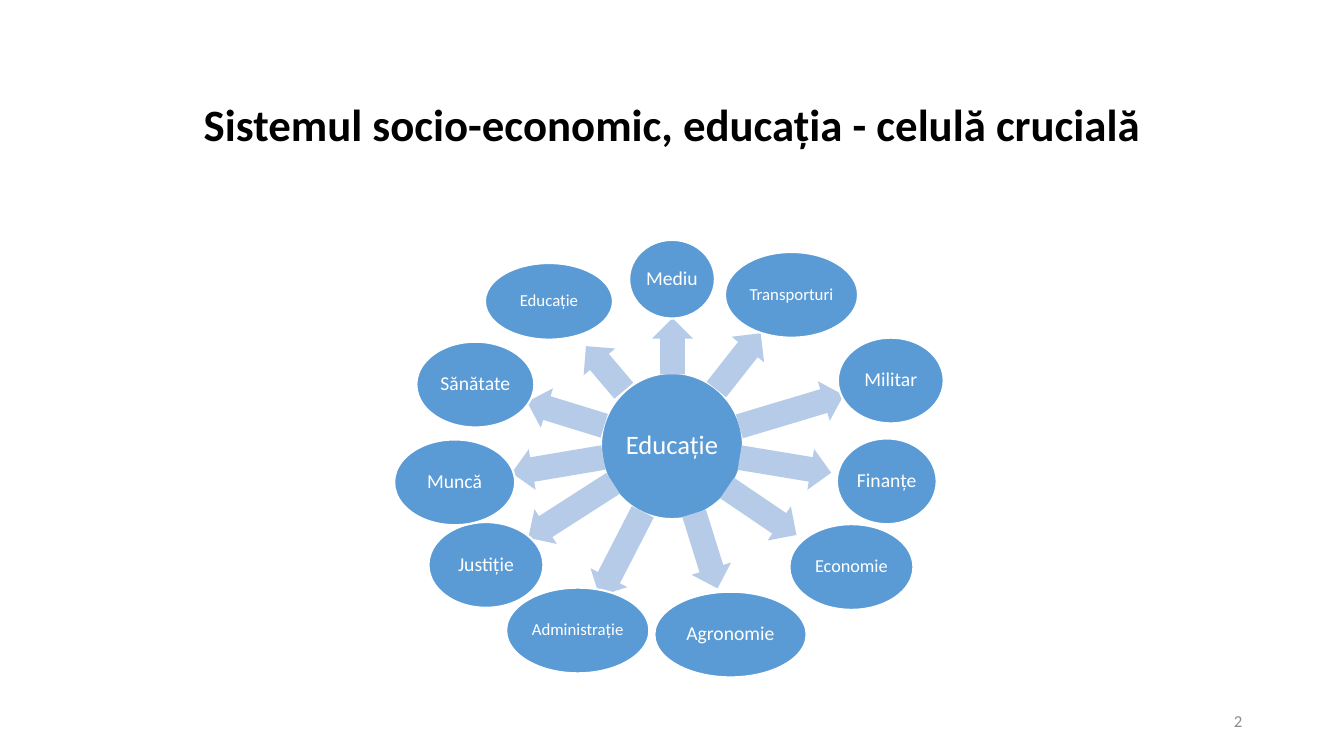
from pptx import Presentation
from pptx.dml.color import RGBColor
from pptx.enum.shapes import MSO_SHAPE
from pptx.enum.text import MSO_ANCHOR, PP_ALIGN
from pptx.util import Inches, Pt

ELLIPSE = MSO_SHAPE.OVAL
ARROW = MSO_SHAPE.RIGHT_ARROW
MIDDLE = MSO_ANCHOR.MIDDLE
CENTER = PP_ALIGN.CENTER
RIGHT = PP_ALIGN.RIGHT

BLUE, PALE, WHITE, BLACK, GREY = "5B9BD5", "B5CBE7", "FFFFFF", "000000", "8C8C8C"
ARROW_HEIGHT = 0.41

HUB = ("Educație", 19, (5.96, 3.7, 1.41, 1.45))
SPOKES = [
    ("Mediu", 14, (6.24, 2.38, 0.85, 0.78), (6.39, 3.23, 0.56), 270),
    ("Transporturi", 12, (7.19, 2.5, 1.32, 0.85), (6.97, 3.38, 0.71), 308.2),
    ("Militar", 14, (8.31, 3.35, 1.05, 0.85), (7.31, 3.87, 1.08), 343.3),
    ("Finanțe", 14, (8.3, 4.35, 0.99, 0.85), (7.33, 4.41, 0.92), 9.4),
    ("Economie", 13, (7.83, 5.2, 1.23, 0.85), (7.14, 4.87, 0.83), 34.1),
    ("Agronomie", 14, (6.49, 5.87, 1.51, 0.85), (6.61, 5.26, 0.78), 72.7),
    ("Administrație", 12, (5.02, 5.83, 1.42, 0.85), (5.69, 5.29, 0.94), 117.2),
    ("Justiție", 14, (4.25, 5.18, 1.14, 0.85), (5.16, 4.86, 1), 147.3),
    ("Muncă", 14, (3.91, 4.36, 1.2, 0.85), (5.07, 4.41, 0.92), 170.4),
    ("Sănătate", 14, (4.13, 3.39, 1.17, 0.85), (5.21, 3.9, 0.8), 197.2),
    ("Educație", 12, (4.81, 2.61, 1.27, 0.76), (5.71, 3.45, 0.58), 229.7),
]


def rgb(value):
    return RGBColor.from_string(value)


class Deck:
    """Holds the style and the current slide."""

    font = "Calibri"

    def __init__(self, prs):
        self.s = prs.slides.add_slide(prs.slide_layouts[6])
        self.diagram = self.s.shapes.add_group_shape()

    def add_text(self, tf, text, size, color, align=CENTER, bold=False, spacing=0.9):
        tf.vertical_anchor = MIDDLE
        p = tf.paragraphs[0]
        p.alignment = align
        p.line_spacing = spacing
        r = p.add_run()
        r.text = text
        r.font.name = self.font
        r.font.size = Pt(size)
        r.font.bold = bold
        r.font.color.rgb = rgb(color)

    def text_box(self, box, text, size, color, **style):
        tf = self.s.shapes.add_textbox(*map(Inches, box)).text_frame
        tf.word_wrap = True
        self.add_text(tf, text, size, color, **style)

    def shape(self, kind, box, fill):
        sp = self.diagram.shapes.add_shape(kind, *map(Inches, box))
        sp.shadow.inherit = False
        sp.fill.solid()
        sp.fill.fore_color.rgb = rgb(fill)
        return sp

    def node(self, label, size, box):
        sp = self.shape(ELLIPSE, box, BLUE)
        sp.line.color.rgb = rgb(WHITE)
        sp.line.width = Pt(1.5)
        tf = sp.text_frame
        tf.word_wrap = False
        tf.margin_left = tf.margin_right = Inches(0.02)
        tf.margin_top = tf.margin_bottom = Inches(0.02)
        self.add_text(tf, label, size, WHITE)

    def arrow(self, left, top, length, angle):
        sp = self.shape(ARROW, (left, top, length, ARROW_HEIGHT), PALE)
        sp.line.fill.background()
        sp.adjustments[0] = 0.6
        sp.adjustments[1] = 0.5
        sp.rotation = angle


def main():
    prs = Presentation()
    prs.slide_width = Inches(13.33)
    prs.slide_height = Inches(7.5)
    deck = Deck(prs)
    deck.text_box((0.92, 0.4, 11.5, 1.72),
                  "Sistemul socio-economic, educația - celulă crucială",
                  32, BLACK, bold=True)
    deck.node(*HUB)
    for label, size, box, start, angle in SPOKES:
        deck.arrow(*start, angle)
        deck.node(label, size, box)
    deck.text_box((9.42, 6.95, 3, 0.4), "2", 12, GREY, align=RIGHT, spacing=1.0)
    prs.save("out.pptx")


if __name__ == "__main__":
    main()
